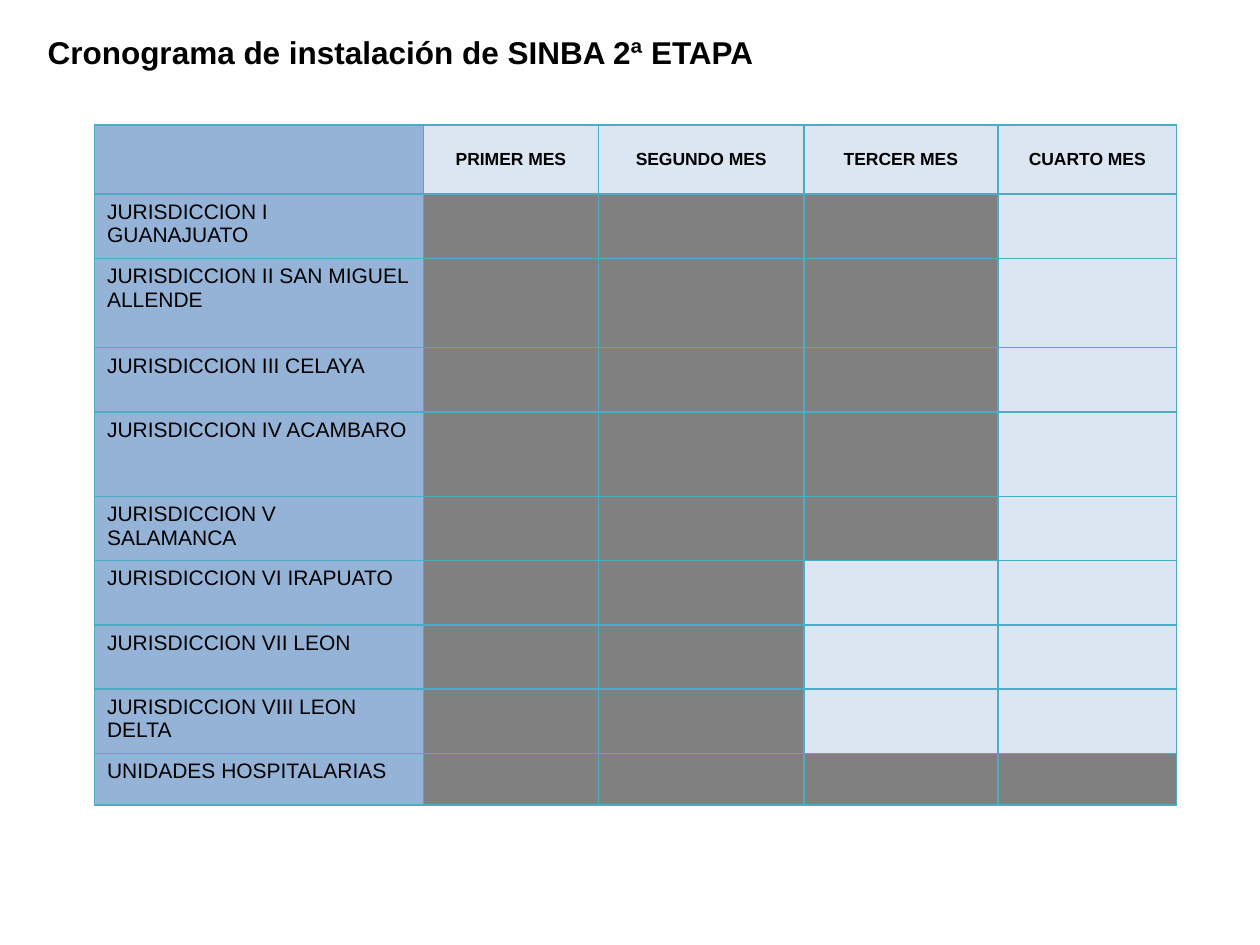
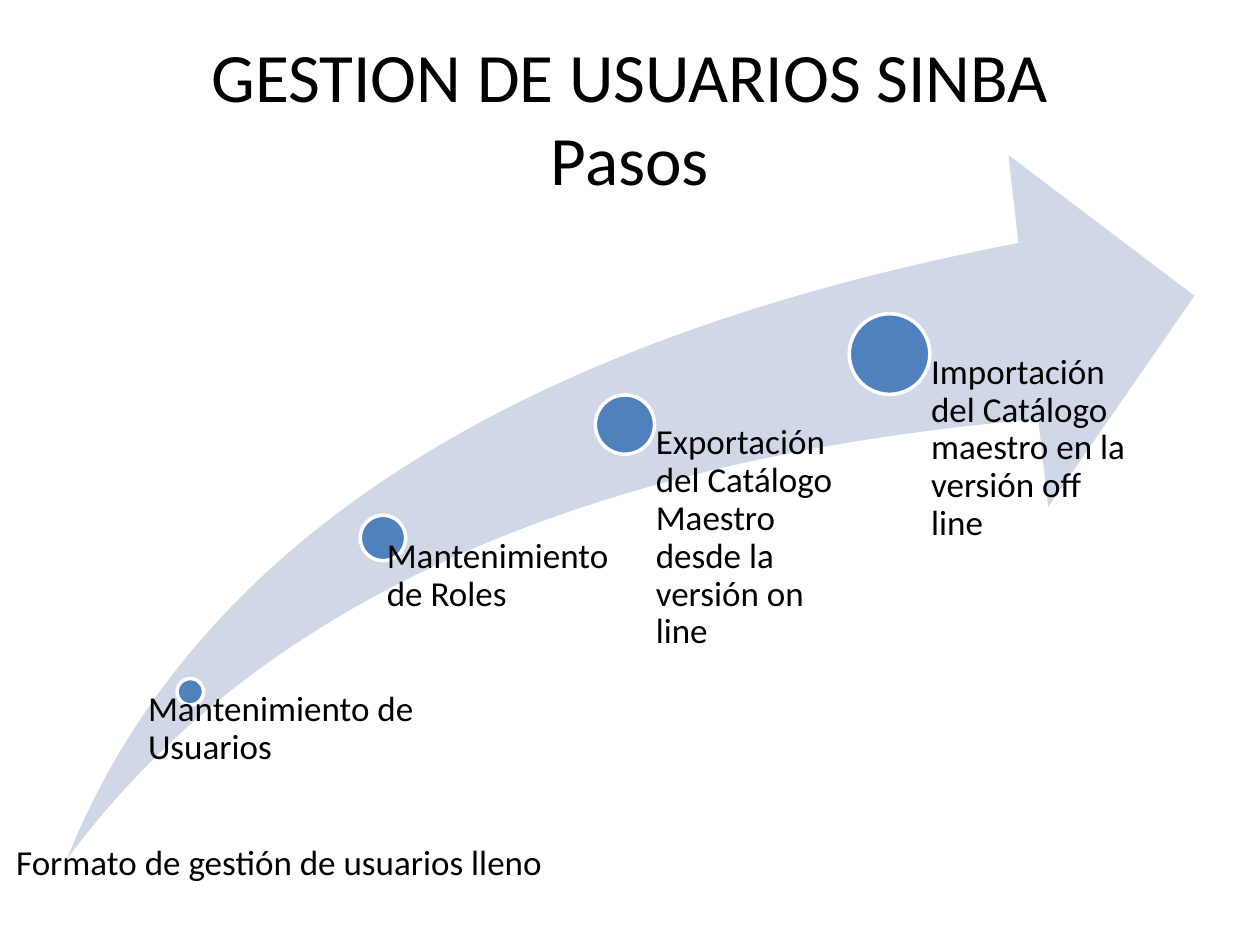
import lxml.etree
import pptx
import pptx.dml.color
import pptx.enum.shapes
import pptx.enum.text
import pptx.oxml.ns
import pptx.util

Inches = pptx.util.Inches
Pt = pptx.util.Pt
Shape = pptx.enum.shapes.MSO_SHAPE
Align = pptx.enum.text.PP_ALIGN
Anchor = pptx.enum.text.MSO_ANCHOR
Fit = pptx.enum.text.MSO_AUTO_SIZE

INK, WHITE = "000000", "FFFFFF"
LABEL, OPEN, BUSY, GRID = "95B3D7", "DCE6F2", "808080", "4BACC6"
SWOOSH, DOT = "D0D8E8", "4F81BD"

HEAD = {"name": "Arial", "size": Pt(18), "bold": True}
MONTH = {"name": "Arial", "size": Pt(10), "bold": True}
UNIT = {"name": "Arial", "size": Pt(12), "bold": False}
TITLE = {"name": "Calibri", "size": Pt(39.6)}
BODY = {"name": "Calibri", "size": Pt(20)}

CENTER = {"alignment": Align.CENTER}
STEP = {"line_spacing": 0.9, "space_after": Pt(7)}
GROW = {"auto_size": Fit.SHAPE_TO_FIT_TEXT}

MONTHS = ["PRIMER MES", "SEGUNDO MES", "TERCER MES", "CUARTO MES"]
# Name, number of busy months, row height
UNITS = [
    ("JURISDICCION I GUANAJUATO", 3, 0.51),
    ("JURISDICCION II SAN MIGUEL ALLENDE", 3, 0.71),
    ("JURISDICCION III CELAYA", 3, 0.51),
    ("JURISDICCION IV ACAMBARO", 3, 0.67),
    ("JURISDICCION V SALAMANCA", 3, 0.51),
    ("JURISDICCION VI IRAPUATO", 2, 0.51),
    ("JURISDICCION VII LEON", 2, 0.51),
    ("JURISDICCION VIII LEON DELTA", 2, 0.51),
    ("UNIDADES HOSPITALARIAS", 4, 0.41),
]
WIDTHS = [2.61, 1.39, 1.63, 1.54, 1.42]

# Dot centre x and y, dot size, label left, label width, label
STEPS = [
    (1.51, 5.49, 0.21, 1.06, 2.42, "Mantenimiento de Usuarios"),
    (3.04, 4.27, 0.36, 2.88, 2.20, "Mantenimiento de Roles"),
    (4.96, 3.37, 0.47, 4.96, 1.88,
     "Exportación del Catálogo Maestro desde la versión on line"),
    (7.06, 2.81, 0.64, 7.06, 1.88,
     "Importación del Catálogo maestro en la versión off line"),
]
BASE = 6.82


def color(value):
    return pptx.dml.color.RGBColor.from_string(value)


def apply(target, values):
    for name, value in values.items():
        setattr(target, name, value)


class Deck:
    def __init__(self):
        self.file = pptx.Presentation()
        apply(self.file, {"slide_width": Inches(10), "slide_height": Inches(7.5)})
        self.slide = None

    def page(self):
        self.slide = self.file.slides.add_slide(self.file.slide_layouts[6])

    def label(self, frame, text, font, para=None):
        line = frame.paragraphs[0]
        line.text = text
        apply(line, para or {})
        for run in line.runs:
            apply(run.font, font)
            run.font.color.rgb = color(INK)

    def text(self, box, text, font, para=None, frame=None):
        shape = self.slide.shapes.add_textbox(*map(Inches, box))
        apply(shape.text_frame, {"word_wrap": True, **(frame or {})})
        self.label(shape.text_frame, text, font, para)

    def shape(self, kind, box, fill, edge=None):
        shape = self.slide.shapes.add_shape(kind, *map(Inches, box))
        shape.shadow.inherit = False
        shape.fill.solid()
        shape.fill.fore_color.rgb = color(fill)
        if edge:
            shape.line.color.rgb = color(edge)
            shape.line.width = Pt(2)
        else:
            shape.line.fill.background()
        return shape

    def table(self, left, top, widths, heights):
        box = map(Inches, (left, top, sum(widths), sum(heights)))
        table = self.slide.shapes.add_table(len(heights), len(widths), *box).table
        apply(table, {"first_row": False, "horz_banding": False})
        for col, width in zip(table.columns, widths):
            col.width = Inches(width)
        for row, height in zip(table.rows, heights):
            row.height = Inches(height)
        return table

    def cell(self, cell, fill, text="", font=None, para=None):
        """Draw the borders first: the schema wants them before the fill."""
        qn = pptx.oxml.ns.qn
        props = cell._tc.get_or_add_tcPr()
        for side in ("lnL", "lnR", "lnT", "lnB"):
            line = lxml.etree.SubElement(props, qn("a:" + side), w=str(Pt(1)))
            solid = lxml.etree.SubElement(line, qn("a:solidFill"))
            lxml.etree.SubElement(solid, qn("a:srgbClr"), val=GRID)
        cell.fill.solid()
        cell.fill.fore_color.rgb = color(fill)
        if text:
            self.label(cell.text_frame, text, font, para)


def plan(deck):
    deck.page()
    heights = [0.55] + [height for _, _, height in UNITS]
    table = deck.table(0.75, 0.99, WIDTHS, heights)
    deck.cell(table.cell(0, 0), LABEL)
    for col, month in enumerate(MONTHS, 1):
        cell = table.cell(0, col)
        deck.cell(cell, OPEN, month, MONTH, CENTER)
        cell.vertical_anchor = Anchor.MIDDLE
    for row, (name, busy, _) in enumerate(UNITS, 1):
        deck.cell(table.cell(row, 0), LABEL, name, UNIT)
        for col in range(1, len(WIDTHS)):
            deck.cell(table.cell(row, col), BUSY if col <= busy else OPEN)
    deck.text((0.28, 0.21, 6.38, 0.4),
              "Cronograma de instalación de SINBA 2ª ETAPA", HEAD, frame=GROW)


def steps(deck):
    deck.page()
    deck.text((0.5, 0.3, 9, 1.25), "GESTION DE USUARIOS SINBA\nPasos", TITLE,
              CENTER, {"vertical_anchor": Anchor.MIDDLE})
    arrow = deck.shape(Shape.SWOOSH_ARROW, (0.53, 1.23, 8.95, 5.59), SWOOSH)
    for index in range(2):
        arrow.adjustments[index] = 0.25
    for x, y, size, left, width, label in STEPS:
        half = size / 2
        deck.shape(Shape.OVAL, (x - half, y - half, size, size), DOT, WHITE)
        inset = {"margin_left": Inches(half + 0.01), "margin_top": 0,
                 "margin_right": 0, "margin_bottom": 0}
        deck.text((left, y, width, BASE - y), label, BODY, STEP, inset)
    deck.text((0.03, 6.62, 4.42, 0.44), "Formato de gestión de usuarios lleno",
              BODY, frame={"word_wrap": False, **GROW})


def main():
    deck = Deck()
    plan(deck)
    steps(deck)
    deck.file.save("out.pptx")


if __name__ == "__main__":
    main()
